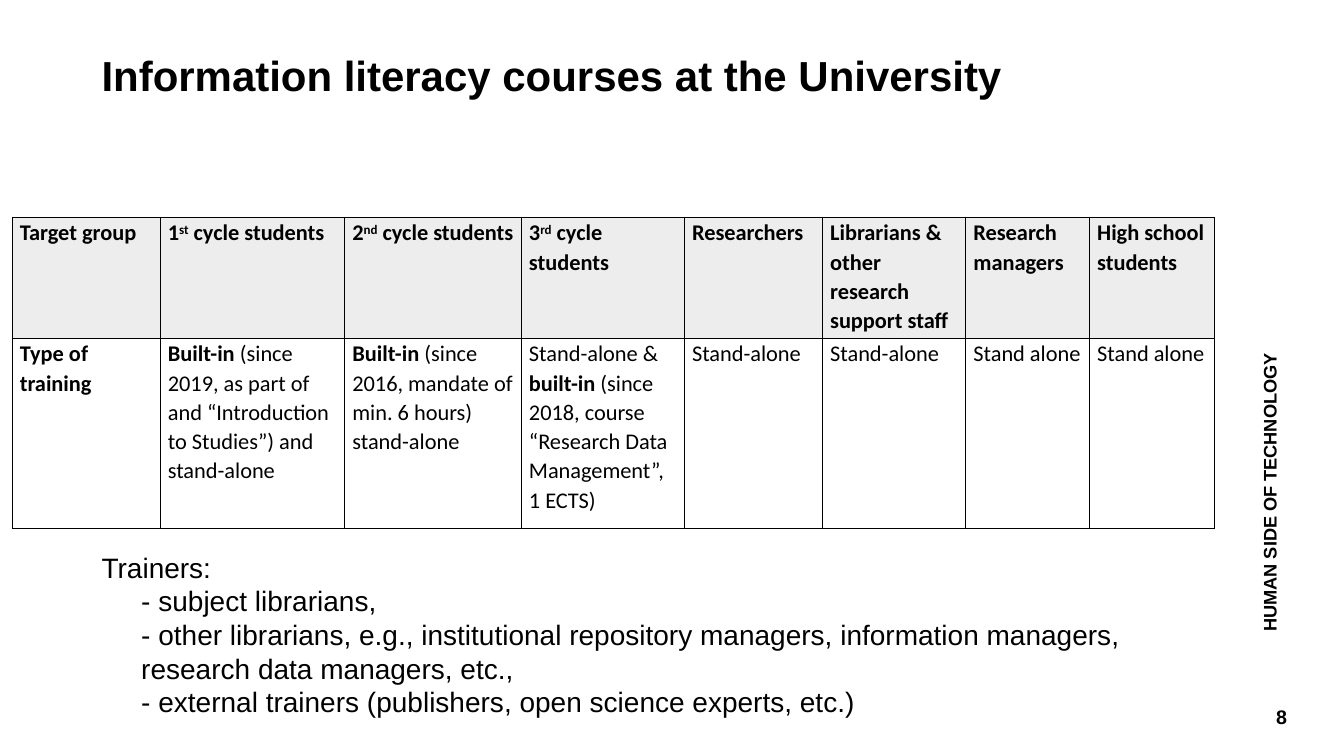
from lxml.etree import SubElement
from pptx import Presentation
from pptx.dml.color import RGBColor
from pptx.enum.text import MSO_ANCHOR as Anchor, PP_ALIGN as Align
from pptx.oxml.ns import qn
from pptx.util import Cm, Pt

BLACK = RGBColor(0x00, 0x00, 0x00)
HEADER_GREY = RGBColor(0xED, 0xED, 0xED)

TITLE = "Information literacy courses at the University"
SIDE_LABEL = "HUMAN SIDE OF TECHNOLOGY"
PAGE_NUMBER = "8"
TRAINERS_HEADING = "Trainers:"
TRAINERS = [
    "- subject librarians,",
    "- other librarians, e.g., institutional repository managers, information managers, "
    "research data managers, etc.,",
    "- external trainers (publishers, open science experts, etc.)",
]

# A cell is a list of paragraphs, a paragraph a list of (text, style) runs.
PLAIN, BOLD, RAISED = "plain", "bold", "raised"


def cycle_heading(number, ordinal):
    return [[(number, BOLD), (ordinal, RAISED), (" cycle students", BOLD)]]


def single(text, style):
    return [[(text, style)]]


# Column width in cm, target group, type of training
COURSES = [
    (3.73, single("Target group", BOLD), single("Type of training", BOLD)),
    (4.65, cycle_heading("1", "st"),
     [[("Built-in ", BOLD),
       ("(since 2019, as part of and “Introduction to Studies”) and stand-alone", PLAIN)]]),
    (4.45, cycle_heading("2", "nd"),
     [[("Built-in ", BOLD), ("(since 2016, mandate of min. 6 hours)", PLAIN)],
      [("stand-alone", PLAIN)]]),
    (4.11, cycle_heading("3", "rd"),
     [[("Stand-alone & ", PLAIN), ("built-in ", BOLD),
       ("(since 2018, course “Research Data Management”, 1 ECTS)", PLAIN)]]),
    (3.48, single("Researchers", BOLD), single("Stand-alone", PLAIN)),
    (3.61, single("Librarians & other research support staff", BOLD),
     single("Stand-alone", PLAIN)),
    (3.12, single("Research managers", BOLD), single("Stand alone", PLAIN)),
    (3.15, single("High school students", BOLD), single("Stand alone", PLAIN)),
]
ROW_HEIGHTS = [3.05, 4.78]


def style_font(font, name, size, bold=False):
    font.name, font.size, font.bold = name, Pt(size), bold
    font.color.rgb = BLACK


def add_text(slide, left, top, width, height, lines, size, bold=True, anchor=Anchor.TOP):
    box = slide.shapes.add_textbox(Cm(left), Cm(top), Cm(width), Cm(height))
    frame = box.text_frame
    frame.word_wrap = True
    frame.vertical_anchor = anchor
    frame.text = "\n".join(lines)
    for paragraph in frame.paragraphs:
        style_font(paragraph.font, "Arial", size, bold)
    return box


def add_borders(cell):
    """Draw a thin black line on all four sides; lines precede the fill in the cell XML."""
    properties = cell._tc.get_or_add_tcPr()
    for position, side in enumerate(("lnL", "lnR", "lnT", "lnB")):
        line = SubElement(properties, qn(f"a:{side}"), w=str(Pt(1)))
        colour = SubElement(SubElement(line, qn("a:solidFill")), qn("a:srgbClr"))
        colour.set("val", str(BLACK))
        properties.insert(position, line)


def fill_cell(cell, paragraphs):
    cell.margin_left = cell.margin_right = Cm(0.19)
    cell.margin_top = cell.margin_bottom = 0
    frame = cell.text_frame
    for index, runs in enumerate(paragraphs):
        paragraph = frame.add_paragraph() if index else frame.paragraphs[0]
        paragraph.line_spacing = 1.07
        style_font(paragraph.font, "Calibri", 16)
        for text, style in runs:
            run = paragraph.add_run()
            run.text = text
            style_font(run.font, "Calibri", 16, style != PLAIN)
            if style == RAISED:
                run._r.get_or_add_rPr().set("baseline", "30000")


def add_courses_table(slide):
    total_width = sum(width for width, *_ in COURSES)
    table = slide.shapes.add_table(
        len(ROW_HEIGHTS), len(COURSES), Cm(0.31), Cm(5.48),
        Cm(total_width), Cm(sum(ROW_HEIGHTS))).table
    table.first_row = table.horz_banding = False
    for row, height in zip(table.rows, ROW_HEIGHTS):
        row.height = Cm(height)
    for column, (width, *contents) in enumerate(COURSES):
        table.columns[column].width = Cm(width)
        for row, paragraphs in enumerate(contents):
            cell = table.cell(row, column)
            fill_cell(cell, paragraphs)
            if row == 0:
                cell.fill.solid()
                cell.fill.fore_color.rgb = HEADER_GREY
            else:
                cell.fill.background()
            add_borders(cell)


def main():
    deck = Presentation()
    deck.slide_width, deck.slide_height = Cm(33.87), Cm(19.05)
    slide = deck.slides.add_slide(deck.slide_layouts[6])

    number = add_text(slide, 31.01, 17.45, 2.57, 1.02, [PAGE_NUMBER], 14, anchor=Anchor.BOTTOM)
    number.text_frame.paragraphs[0].alignment = Align.CENTER

    title = add_text(slide, 2.31, 1.27, 25.32, 2.69, [TITLE], 30)
    title.text_frame.paragraphs[0].line_spacing = 0.9

    side = add_text(slide, 26.14, 8.43, 12.22, 3.25, [SIDE_LABEL], 13, anchor=Anchor.MIDDLE)
    side.rotation = 270
    side.text_frame.margin_bottom = Cm(0.81)
    side.text_frame.paragraphs[0].line_spacing = 1.3

    add_courses_table(slide)

    trainers = add_text(slide, 2.31, 13.74, 28.68, 5.31,
                        [TRAINERS_HEADING, *TRAINERS], 20, bold=False)
    for paragraph in trainers.text_frame.paragraphs[1:]:
        paragraph._p.get_or_add_pPr().set("marL", str(Cm(1)))

    deck.save("out.pptx")


if __name__ == "__main__":
    main()
